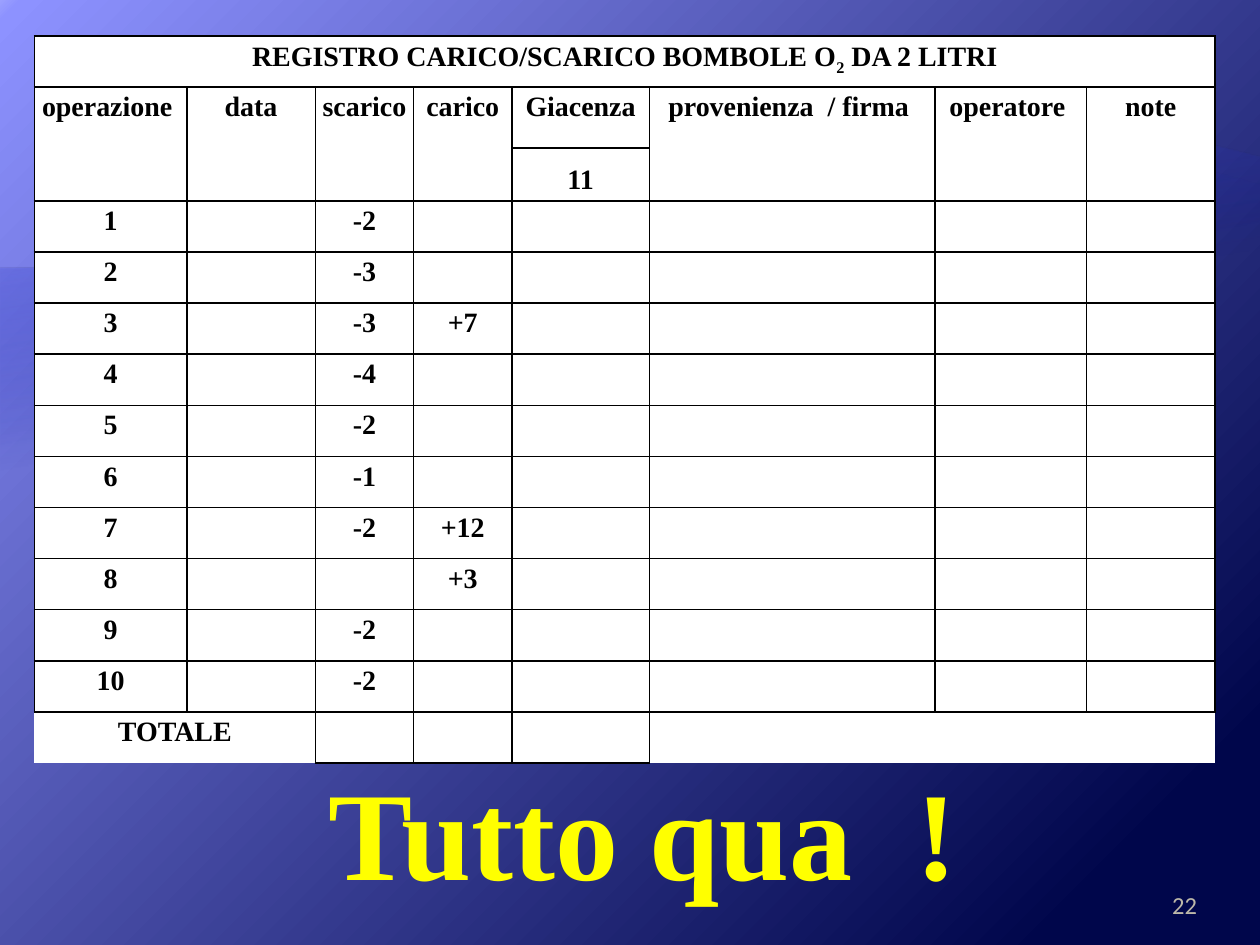
from dataclasses import dataclass

from lxml.etree import SubElement
from pptx import Presentation
from pptx.dml.color import RGBColor
from pptx.enum.shapes import MSO_CONNECTOR
from pptx.enum.text import MSO_ANCHOR, MSO_AUTO_SIZE, PP_ALIGN
from pptx.oxml import parse_xml
from pptx.oxml.ns import nsdecls, qn
from pptx.util import Pt

BLACK = RGBColor(0x00, 0x00, 0x00)
WHITE = RGBColor(0xFF, 0xFF, 0xFF)
YELLOW = RGBColor(0xFF, 0xFF, 0x00)
SAND = RGBColor(0xBD, 0xB8, 0xA9)
NAVY = RGBColor(0x00, 0x06, 0x4B)
DEEP_BLUE = RGBColor(0x00, 0x0D, 0x9E)
PERIWINKLE = RGBColor(0x79, 0x7F, 0xFF)
LAVENDER = RGBColor(0xA3, 0xA7, 0xFF)
SKY = RGBColor(0x8D, 0x92, 0xFF)
PALE_SKY = RGBColor(0x9B, 0xA0, 0xFF)
SERIF = "Times New Roman"
WIDTH, HEIGHT = 720, 540
COLUMN_WIDTHS = (87.1, 73.4, 56.2, 56.2, 78.5, 163.4, 86.4, 73.4)
ROW_HEIGHT, HEADER_HEIGHT = 29.2, 58.3
HEADERS = ("operazione ", "data", "scarico", "carico", "Giacenza",
           "provenienza  / firma ", "operatore ", "note")
UNLOADED = ("-2", "-3", "-3", "-4", "-2", "-1", "-2", "", "-2", "-2")
LOADED = {3: "+7", 7: "+12", 8: "+3"}
TOTAL_BORDERS = ("RT", "RT", "LRTB", "LRTB", "LRTB", "LT", "T", "T")


@dataclass(frozen=True)
class Stop:
    position: int
    color: RGBColor
    opacity: int = 100


@dataclass(frozen=True)
class Wave:
    bottom: float
    curve: tuple
    tint: Stop


WAVES = (
    Wave(527.8, ((0, 153.4), (360, 153.4), (384.5, 3.6), (720, 90)),
         Stop(100, PERIWINKLE, 55)),
    Wave(458.6, ((0, 153.4), (360, 153.4), (430.6, 22.3), (720, 105.8)),
         Stop(100, LAVENDER, 30)),
)


def gradient(stops: tuple, direction: str):
    marks = "".join(
        f'<a:gs pos="{stop.position * 1000}"><a:srgbClr val="{stop.color}">'
        f'<a:alpha val="{stop.opacity * 1000}"/></a:srgbClr></a:gs>'
        for stop in stops)
    return parse_xml(f'<a:gradFill {nsdecls("a")} rotWithShape="1">'
                     f'<a:gsLst>{marks}</a:gsLst>{direction}</a:gradFill>')


def replace_fill(solid, new_fill) -> None:
    solid.getparent().replace(solid, new_fill)


def paint_background(page) -> None:
    page.background.fill.solid()
    solid = page.element.xpath(".//p:bgPr/a:solidFill")[0]
    stops = (Stop(0, PALE_SKY), Stop(1, SKY), Stop(90, NAVY))
    replace_fill(solid, gradient(
        stops, '<a:path path="circle">'
               '<a:fillToRect r="210000" b="300000"/></a:path>'))


def curve_point(curve: tuple, t: float) -> tuple:
    weights = ((1 - t) ** 3, 3 * t * (1 - t) ** 2, 3 * t * t * (1 - t), t ** 3)
    return tuple(Pt(sum(w * point[axis] for w, point in zip(weights, curve)))
                 for axis in (0, 1))


def draw_wave(page, wave: Wave) -> None:
    outline = page.shapes.build_freeform(Pt(WIDTH), Pt(wave.bottom))
    crest = [curve_point(wave.curve, step / 40) for step in range(41)]
    outline.add_line_segments([(0, Pt(wave.bottom)), *crest], close=True)
    shape = outline.convert_to_shape()
    shape.shadow.inherit = False
    shape.line.fill.background()
    shape.fill.solid()
    solid = shape.element.xpath("./p:spPr/a:solidFill")[0]
    replace_fill(solid, gradient((Stop(65, DEEP_BLUE, 0), wave.tint),
                                 '<a:lin ang="15600000" scaled="0"/>'))


def format_para(para, size: float, color: RGBColor, font: str = SERIF,
                bold: bool = True, align=PP_ALIGN.CENTER) -> None:
    para.alignment = align
    para.font.size = Pt(size)
    para.font.name = font
    para.font.bold = bold
    para.font.color.rgb = color


def set_borders(cell, sides: str) -> None:
    properties = cell._tc.get_or_add_tcPr()
    for index, side in enumerate("LRTB"):
        paint = (f'<a:solidFill><a:srgbClr val="{BLACK}"/></a:solidFill>'
                 if side in sides else "<a:noFill/>")
        properties.insert(index, parse_xml(
            f'<a:ln{side} {nsdecls("a")} w="12700">{paint}</a:ln{side}>'))


def format_cell(cell, text: str, sides: str) -> None:
    cell.fill.solid()
    cell.fill.fore_color.rgb = WHITE
    cell.margin_left = cell.margin_right = Pt(3.6)
    cell.margin_top = cell.margin_bottom = 0
    set_borders(cell, sides)
    para = cell.text_frame.paragraphs[0]
    para.line_spacing = 1.15
    format_para(para, 16, BLACK)
    if text:
        para.add_run().text = text


def draw_register(page) -> None:
    records = [(str(number), "", unloaded, LOADED.get(number, ""), "", "", "", "")
               for number, unloaded in enumerate(UNLOADED, 1)]
    rows = [("",) * 8, HEADERS, *records, ("TOTALE",) + ("",) * 7]
    total = len(rows) - 1
    table = page.shapes.add_table(
        len(rows), len(HEADERS), Pt(19.7), Pt(20.5), Pt(sum(COLUMN_WIDTHS)),
        Pt(ROW_HEIGHT * total + HEADER_HEIGHT)).table
    table.horz_banding = False
    table.first_row = False
    for column, width in zip(table.columns, COLUMN_WIDTHS):
        column.width = Pt(width)
    for index, texts in enumerate(rows):
        table.rows[index].height = Pt(HEADER_HEIGHT if index == 1 else ROW_HEIGHT)
        for position, text in enumerate(texts):
            sides = TOTAL_BORDERS[position] if index == total else "LRTB"
            format_cell(table.cell(index, position), text, sides)
    table.cell(0, 0).merge(table.cell(0, 7))
    table.cell(total, 0).merge(table.cell(total, 1))

    heading = table.cell(0, 0).text_frame.paragraphs[0]
    for text, baseline in (("REGISTRO CARICO/SCARICO BOMBOLE O", 0),
                           ("2", -25000), (" DA 2 LITRI", 0)):
        span = heading.add_run()
        span.text = text
        if baseline:
            span._r.get_or_add_rPr().set("baseline", str(baseline))

    stock = table.cell(1, 4).text_frame.add_paragraph()
    stock.text = "11"
    stock.line_spacing = 1.15
    stock.space_before = Pt(21)
    format_para(stock, 16, BLACK)


def draw_stock_line(page) -> None:
    line = page.shapes.add_connector(
        MSO_CONNECTOR.STRAIGHT, Pt(292.5), Pt(84.4), Pt(371.3), Pt(84.4))
    line.line.color.rgb = BLACK
    line.line.width = Pt(1.25)
    SubElement(line.element.spPr, qn("a:effectLst"))


def write_closing(page) -> None:
    title = page.shapes.title
    title.left, title.top, title.width, title.height = (
        Pt(129.6), Pt(427.7), Pt(475.9), Pt(94.3))
    frame = title.text_frame
    frame.text = "Tutto qua  !"
    frame.word_wrap = True
    frame.auto_size = MSO_AUTO_SIZE.SHAPE_TO_FIT_TEXT
    frame.vertical_anchor = MSO_ANCHOR.TOP
    format_para(frame.paragraphs[0], 72, YELLOW)


def write_page_number(page) -> None:
    box = page.shapes.add_textbox(Pt(642.2), Pt(500.4), Pt(41.8), Pt(28.8))
    frame = box.text_frame
    frame.word_wrap = True
    frame.margin_right = 0
    frame.vertical_anchor = MSO_ANCHOR.BOTTOM
    frame.text = "22"
    format_para(frame.paragraphs[0], 14, SAND, "Calibri", False, PP_ALIGN.RIGHT)


def main() -> None:
    deck = Presentation()
    deck.slide_width, deck.slide_height = Pt(WIDTH), Pt(HEIGHT)
    page = deck.slides.add_slide(deck.slide_layouts[5])
    paint_background(page)
    for wave in WAVES:
        draw_wave(page, wave)
    write_page_number(page)
    draw_register(page)
    write_closing(page)
    draw_stock_line(page)
    deck.save("out.pptx")


if __name__ == "__main__":
    main()
